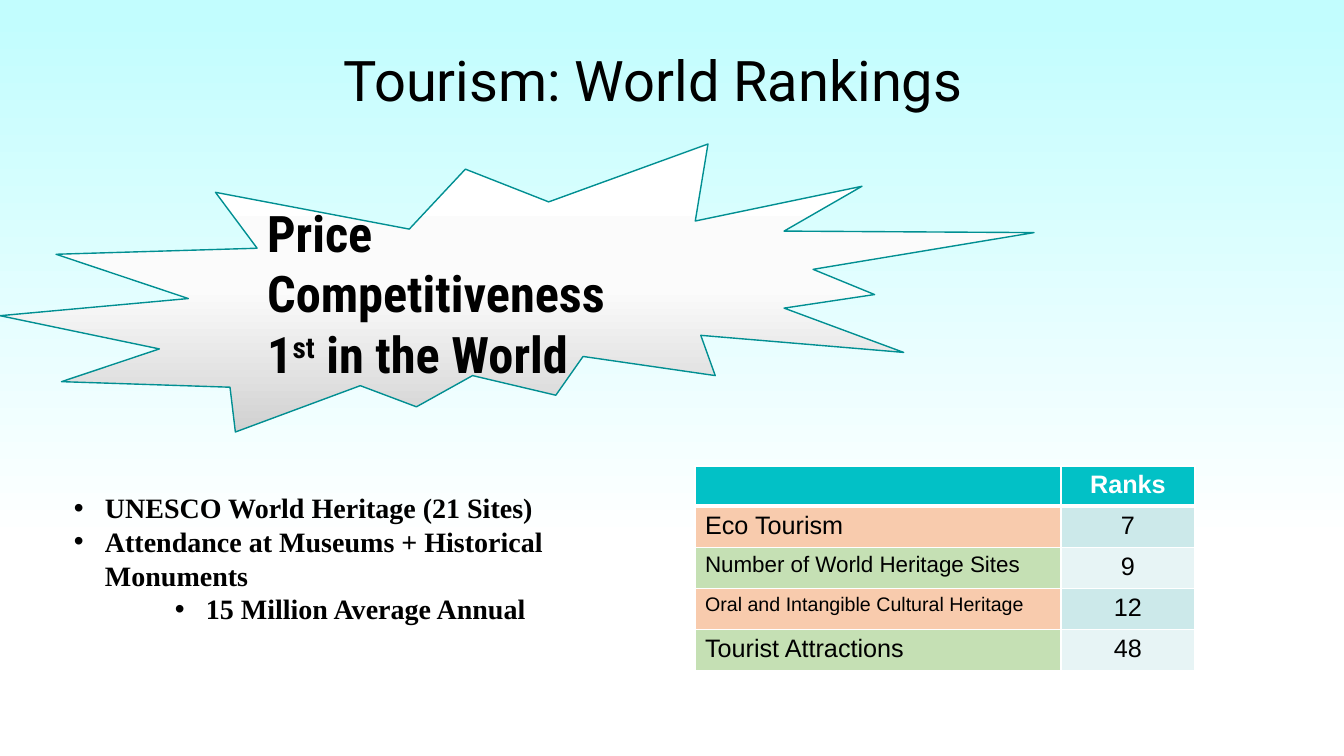
from copy import deepcopy

from lxml import etree
from pptx import Presentation
from pptx import util as u
from pptx.dml.color import RGBColor
from pptx.enum import shapes, text
from pptx.oxml import ns

PX = 914400 / 100.8
WIDE, HIGH = 1344, 756

BLACK = RGBColor(0x00, 0x00, 0x00)
WHITE = RGBColor(0xFF, 0xFF, 0xFF)
SKY = RGBColor(0xC2, 0xFD, 0xFE)
PEARL = RGBColor(0xFB, 0xFB, 0xFB)
SILVER = RGBColor(0xD1, 0xD1, 0xD1)
TEAL = RGBColor(0x01, 0x8F, 0x92)
AQUA = RGBColor(0x02, 0xC1, 0xC6)
PEACH = RGBColor(0xF8, 0xCB, 0xAD)
GREEN = RGBColor(0xC5, 0xE0, 0xB4)
MIST = RGBColor(0xCC, 0xE9, 0xEA)
PALE = RGBColor(0xE7, 0xF4, 0xF5)

LEFT, MID = text.PP_ALIGN.LEFT, text.PP_ALIGN.CENTER

BULLETS = [
    ("UNESCO World Heritage (21 Sites)", 0),
    ("Attendance at Museums + Historical Monuments", 0),
    ("15 Million Average Annual", 1),
]
RANKS = [
    ("Eco Tourism", 18, "7"),
    ("Number of World Heritage Sites", 16, "9"),
    ("Oral and Intangible Cultural Heritage", 14, "12"),
    ("Tourist Attractions", 18, "48"),
]


def emu(*sizes):
    return [u.Emu(round(size * PX)) for size in sizes]


def write(para, words, font="Arial", size=18, color=BLACK, bold=False,
          align=LEFT, rise=0):
    """Add one run to a paragraph; rise lifts it by that percentage."""
    para.alignment = align
    run = para.add_run()
    run.text = words
    run.font.name = font
    run.font.size = u.Pt(size)
    run.font.bold = bold
    run.font.color.rgb = color
    if rise:
        run.font._element.set("baseline", str(rise * 1000))


def shade(fill, stops):
    """Fill from top to bottom with (percent, colour) stops."""
    fill.gradient()
    fill.gradient_angle = 270
    nodes = fill.gradient_stops[0]._gs.getparent()
    while len(nodes) < len(stops):
        nodes.append(deepcopy(nodes[-1]))
    for stop, (place, color) in zip(fill.gradient_stops, stops):
        stop.position = place / 100
        stop.color.rgb = color


def frame(slide, box):
    area = slide.shapes.add_textbox(*emu(*box)).text_frame
    area.word_wrap = True
    return area


def title(slide, box):
    para = frame(slide, box).paragraphs[0]
    write(para, "Tourism: World Rankings", font="Roboto", size=40, align=MID)


def burst(slide, box):
    seal = slide.shapes.add_shape(shapes.MSO_SHAPE.EXPLOSION2, *emu(*box))
    seal.shadow.inherit = False
    shade(seal.fill, [(0, WHITE), (50, PEARL), (100, SILVER)])
    seal.line.color.rgb = TEAL
    seal.line.width = u.Pt(1)
    area = seal.text_frame
    area.word_wrap = True
    area.vertical_anchor = text.MSO_ANCHOR.MIDDLE
    para = area.paragraphs[0]
    style = dict(font="Roboto Condensed", size=36, bold=True)
    write(para, "Price Competitiveness", **style)
    para.add_line_break()
    write(para, "1", **style)
    write(para, "st", rise=30, **style)
    write(para, " in the World", **style)


def points(slide, box):
    area = frame(slide, box)
    hang, step = emu(31, 101)
    for i, (words, level) in enumerate(BULLETS):
        para = area.add_paragraph() if i else area.paragraphs[0]
        para.level = level
        write(para, words, font="Times New Roman", size=20, bold=True)
        props = para._p.get_or_add_pPr()
        props.set("marL", str(hang + level * step))
        props.set("indent", str(-hang))
        etree.SubElement(props, ns.qn("a:buFont"), typeface="Arial")
        etree.SubElement(props, ns.qn("a:buChar"), char="•")


def paint(cell, color, top=1, base=1):
    """Fill a cell and rule it in white; top and base are in points."""
    props = cell._tc.get_or_add_tcPr()
    for side, width in zip("LRTB", (1, 1, top, base)):
        line = etree.SubElement(props, ns.qn("a:ln" + side),
                                w=str(u.Pt(width)))
        solid = etree.SubElement(line, ns.qn("a:solidFill"))
        etree.SubElement(solid, ns.qn("a:srgbClr"), val=str(WHITE))
    cell.fill.solid()
    cell.fill.fore_color.rgb = color


def ranking(slide, box):
    left, top, wide, high = box
    head, rank = 37, 134
    row = (high - head) / len(RANKS)
    grid = slide.shapes.add_table(len(RANKS) + 1, 2, *emu(*box)).table
    for col, size in zip(grid.columns, emu(wide - rank, rank)):
        col.width = size
    for line, size in zip(grid.rows, emu(head, *[row] * len(RANKS))):
        line.height = size

    for col in range(2):
        paint(grid.cell(0, col), AQUA, base=3)
    write(grid.cell(0, 1).text_frame.paragraphs[0], "Ranks",
          color=WHITE, bold=True, align=MID)

    for i, (name, size, place) in enumerate(RANKS):
        label, value = grid.cell(i + 1, 0), grid.cell(i + 1, 1)
        rule = 1 if i else 3
        paint(label, (PEACH, GREEN)[i % 2], top=rule)
        paint(value, (MIST, PALE)[i % 2], top=rule)
        write(label.text_frame.paragraphs[0], name, size=size)
        write(value.text_frame.paragraphs[0], place, align=MID)


def main():
    deck = Presentation()
    deck.slide_width, deck.slide_height = emu(WIDE, HIGH)
    slide = deck.slides.add_slide(deck.slide_layouts[6])
    shade(slide.background.fill, [(2, SKY), (72, WHITE)])
    points(slide, (64, 486, 541, 179))
    burst(slide, (0, 144, 1034, 288))
    ranking(slide, (695, 466, 500, 201))
    title(slide, (17, 41, 1272, 78))
    deck.save("out.pptx")


if __name__ == "__main__":
    main()
